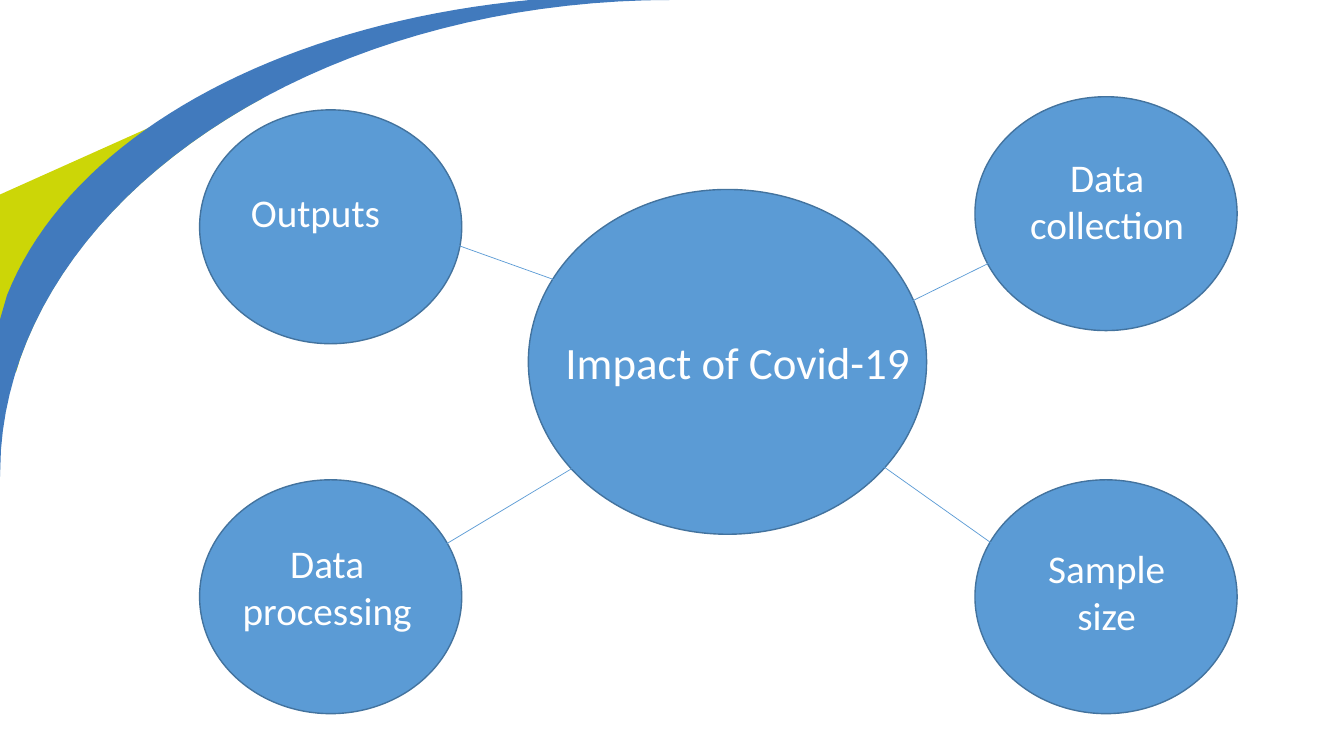
from dataclasses import dataclass

from lxml import etree
from pptx import Presentation
from pptx.dml.color import RGBColor
from pptx.enum import shapes, text
from pptx.oxml.ns import qn
from pptx.util import Inches, Pt


@dataclass(frozen=True)
class Theme:
    font: str = "Calibri"
    hub_size: int = 32
    node_size: int = 28
    white: str = "FFFFFF"
    circle: str = "5B9BD5"
    outline: str = "43739E"
    arc: str = "417ABD"
    wedge: str = "CCD607"


THEME = Theme()
NODE_SIZE = (2.6, 2.32)
# label, circle corner, label box relative to it, alignment, link from hub, link to node
CENTER, LEFT = text.PP_ALIGN.CENTER, text.PP_ALIGN.LEFT
NODES = [
    ("Data collection", (9.67, 0.96), (0.37, 0.51, 1.88, 1.04), CENTER, (9.04, 2.99), (9.85, 2.59)),
    ("Sample size", (9.67, 4.76), (0.48, 0.59, 1.65, 1.04), CENTER, (8.75, 4.62), (9.85, 5.4)),
    ("Data processing", (1.98, 4.76), (0.3, 0.54, 1.93, 1.04), CENTER, (5.72, 4.62), (4.42, 5.4)),
    ("Outputs", (1.98, 1.09), (0.41, 0.73, 1.84, 0.57), LEFT, (5.51, 2.78), (4.42, 2.39)),
]


def rgb(value):
    return RGBColor.from_string(value)


def bezier(p0, p1, p2, p3, steps=40):
    """Points along a cubic curve, both ends included."""
    points = []
    for i in range(steps + 1):
        t = i / steps
        weights = ((1 - t) ** 3, 3 * t * (1 - t) ** 2, 3 * t * t * (1 - t), t ** 3)
        points.append(tuple(sum(w * p[axis] for w, p in zip(weights, (p0, p1, p2, p3)))
                            for axis in (0, 1)))
    return points


def add_outline(s, box, points, color):
    """Draw a filled outline whose points are relative to the box corner."""
    x, y = box[:2]
    start, *rest = [(Inches(x + px), Inches(y + py)) for px, py in points]
    builder = s.shapes.build_freeform(*start)
    builder.add_line_segments(rest, close=True)
    sp = builder.convert_to_shape()
    sp.shadow.inherit = False
    sp.fill.solid()
    sp.fill.fore_color.rgb = rgb(color)
    sp.line.fill.background()


def add_corner(s, box):
    wedge = [(0, 1.93), (2.52, 0.8), (2.6, 0.98)]
    wedge += bezier((2.54, 1.01), (1.4, 1.65), (0.56, 2.53), (0.2, 3.56))
    wedge += [(0.16, 3.69), (0, 3.32)]
    arc = [(7.16, 0)]
    arc += bezier((6.67, 0), (3.1, 0), (0.19, 1.98), (0.01, 4.46))
    arc += [(0, 4.74), (0, 3.17)]
    arc += bezier((0.07, 2.93), (0.69, 1.37), (2.72, 0.24), (5.26, 0))
    add_outline(s, box, wedge, THEME.wedge)
    add_outline(s, box, arc, THEME.arc)


def add_circle(s, box):
    sp = s.shapes.add_shape(shapes.MSO_SHAPE.OVAL, *map(Inches, box))
    sp.shadow.inherit = False
    sp.fill.solid()
    sp.fill.fore_color.rgb = rgb(THEME.circle)
    sp.line.color.rgb = rgb(THEME.outline)
    sp.line.width = Pt(1)


def add_label(s, box, label, size, align):
    tf = s.shapes.add_textbox(*map(Inches, box)).text_frame
    tf.word_wrap = True
    p = tf.paragraphs[0]
    p.alignment = align
    r = p.add_run()
    r.text = label
    for name, value in {"name": THEME.font, "size": Pt(size)}.items():
        setattr(r.font, name, value)
    r.font.color.rgb = rgb(THEME.white)


def add_link(s, start, end):
    link = s.shapes.add_connector(shapes.MSO_CONNECTOR.STRAIGHT, *map(Inches, start + end))
    link.line.color.rgb = rgb(THEME.circle)
    link.line.width = Pt(0.5)
    etree.SubElement(link._element.spPr, qn("a:effectLst"))


def add_hub(s, box):
    x, y = box[:2]
    add_circle(s, box)
    add_label(s, (x + 0.27, y + 1.39, 3.68, 0.64), "Impact of Covid-19", THEME.hub_size, LEFT)


def add_node(s, box, label, label_box, align, start, end):
    x, y = box[:2]
    dx, dy, width, height = label_box
    add_circle(s, box)
    add_link(s, start, end)
    add_label(s, (x + dx, y + dy, width, height), label, THEME.node_size, align)


def main():
    prs = Presentation()
    prs.slide_width, prs.slide_height = Inches(13.33), Inches(7.5)
    s = prs.slides.add_slide(prs.slide_layouts[6])
    add_corner(s, (0, 0, 7.16, 4.74))
    add_hub(s, (5.24, 1.88, 3.95, 3.42))
    for label, corner, label_box, align, start, end in NODES:
        add_node(s, corner + NODE_SIZE, label, label_box, align, start, end)
    prs.save("out.pptx")


if __name__ == "__main__":
    main()
